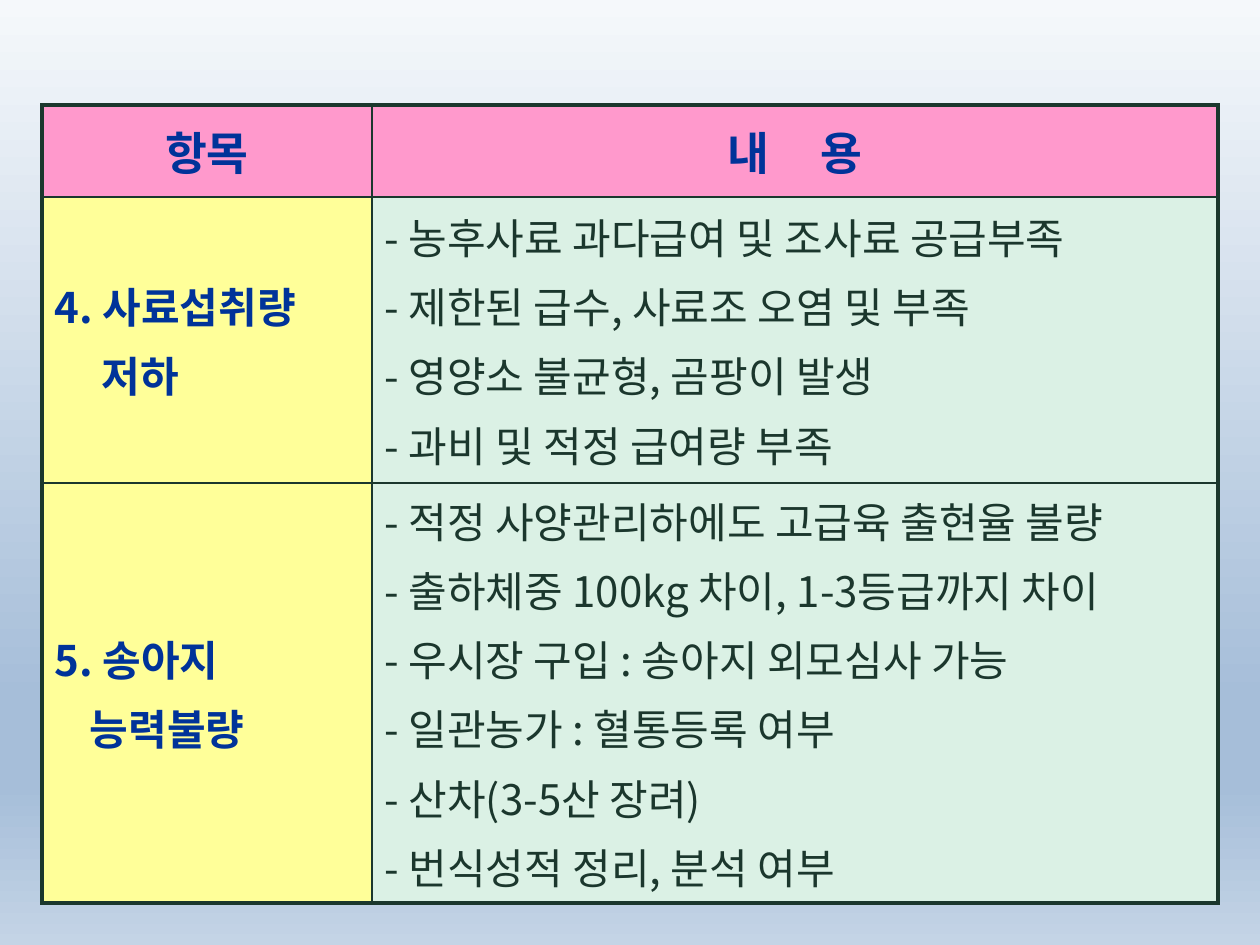
import dataclasses

import pptx
import pptx.dml.color
import pptx.enum.text
import pptx.oxml
import pptx.oxml.ns
import pptx.oxml.xmlchemy
import pptx.util

qn = pptx.oxml.ns.qn
RGB = pptx.dml.color.RGBColor.from_string


@dataclasses.dataclass(frozen=True)
class Theme:
    """Colours, type sizes and line widths of the deck."""
    font: str = "Noto Sans CJK KR"
    ink: str = "1B372D"
    title: str = "003399"
    head_fill: str = "FF99CC"
    item_fill: str = "FFFF99"
    body_fill: str = "DBF1E5"
    head_size: float = 26
    body_size: float = 24
    space: float = 4.8
    outer: float = 2.25
    inner: float = 1
    backdrop: tuple = ((0, "F5F8FB"), (74, "A6BED9"), (83, "A6BED9"), (100, "C4D4E6"))


class Deck:
    """Draws elements on the current slide, measured on a 30 by 90 grid."""

    def __init__(self, theme):
        """Open a deck with one blank slide."""
        self.theme = theme
        self.prs = pptx.Presentation()
        self.prs.slide_width = pptx.util.Inches(10)
        self.prs.slide_height = pptx.util.Inches(7.5)
        self.s = self.prs.slides.add_slide(self.prs.slide_layouts[6])

    def x(self, columns):
        """Turn grid columns into a length."""
        return round(self.prs.slide_width * columns / 30)

    def y(self, rows):
        """Turn grid rows into a length."""
        return round(self.prs.slide_height * rows / 90)

    def background(self):
        """Fill the slide with the vertical gradient of the theme."""
        fill = self.s.background.fill
        fill.gradient()
        fill.gradient_angle = 270
        stops = self.s.element.find(".//" + qn("a:gsLst"))
        for stop in list(stops):
            stops.remove(stop)
        for share, colour in self.theme.backdrop:
            stop = pptx.oxml.xmlchemy.OxmlElement("a:gs")
            stop.set("pos", str(share * 1000))
            pptx_colour = pptx.oxml.xmlchemy.OxmlElement("a:srgbClr")
            pptx_colour.set("val", colour)
            stop.append(pptx_colour)
            stops.append(stop)

    def table(self, left, top, widths, heights):
        """Add a table with a heavy frame and thin inner rules."""
        frame = self.s.shapes.add_table(
            len(heights), len(widths), self.x(left), self.y(top),
            self.x(sum(widths)), self.y(sum(heights)))
        tbl = frame.table
        tbl.first_row = tbl.horz_banding = False
        for column, width in zip(tbl.columns, widths):
            column.width = self.x(width)
        for row, height in zip(tbl.rows, heights):
            row.height = self.y(height)
        last_row, last_column = len(heights) - 1, len(widths) - 1
        for i in range(len(heights)):
            for j in range(len(widths)):
                edges = {"L": j == 0, "R": j == last_column, "T": i == 0, "B": i == last_row}
                for side, is_outer in edges.items():
                    width = self.theme.outer if is_outer else self.theme.inner
                    self.border(tbl.cell(i, j), side, width)
        return tbl

    def border(self, cell, side, width):
        """Rule one side of a cell."""
        namespace = pptx.oxml.ns.nsdecls("a")
        cell._tc.get_or_add_tcPr().append(pptx.oxml.parse_xml(
            f'<a:ln{side} {namespace} w="{pptx.util.Pt(width)}"><a:solidFill>'
            f'<a:srgbClr val="{self.theme.ink}"/></a:solidFill></a:ln{side}>'))

    def cell(self, cell, lines, fill, colour, size, bold=False, centred=False, hang=0):
        """Fill a cell with paragraphs, each a list of text and tracking pairs."""
        cell.fill.solid()
        cell.fill.fore_color.rgb = RGB(fill)
        cell.vertical_anchor = pptx.enum.text.MSO_ANCHOR.MIDDLE
        tf = cell.text_frame
        for i, line in enumerate(lines):
            p = tf.add_paragraph() if i else tf.paragraphs[0]
            if i:
                p.space_before = pptx.util.Pt(self.theme.space)
                if hang:
                    p._p.get_or_add_pPr().set("marL", str(self.x(hang)))
            if centred:
                p.alignment = pptx.enum.text.PP_ALIGN.CENTER
            for text, tracking in line:
                self.run(p, text, tracking, colour, size, bold)

    def run(self, p, text, tracking, colour, size, bold):
        """Add one styled run, tracked by a number of points."""
        r = p.add_run()
        r.text = text
        r.font.name = self.theme.font
        r.font.size = pptx.util.Pt(size)
        r.font.bold = bold
        r.font.color.rgb = RGB(colour)
        properties = r._r.get_or_add_rPr()
        if tracking:
            properties.set("spc", str(tracking * 100))
        east_asian = pptx.oxml.xmlchemy.OxmlElement("a:ea")
        east_asian.set("typeface", self.theme.font)
        properties.find(qn("a:latin")).addnext(east_asian)


HEADINGS = ([("항목", 0)], [("내", 0), (" ", 23), ("용", 0)])
ITEMS = (
    (("4. 사료섭취량", "저하"), 1.12, (
        "농후사료 과다급여 및 조사료 공급부족",
        "제한된 급수, 사료조 오염 및 부족",
        "영양소 불균형, 곰팡이 발생",
        "과비 및 적정 급여량 부족")),
    (("5. 송아지", "능력불량"), 0.84, (
        "적정 사양관리하에도 고급육 출현율 불량",
        "출하체중 100kg 차이, 1-3등급까지 차이",
        "우시장 구입 : 송아지 외모심사 가능",
        "일관농가 : 혈통등록 여부",
        "산차(3-5산 장려)",
        "번식성적 정리, 분석 여부")),
)


def main():
    """Build the slide and save it."""
    theme = Theme()
    deck = Deck(theme)
    deck.background()
    tbl = deck.table(1, 10, widths=(7.86, 20.14), heights=(8.76, 27.24, 38))
    for j, heading in enumerate(HEADINGS):
        deck.cell(tbl.cell(0, j), [heading], theme.head_fill, theme.title,
                  theme.head_size, bold=True, centred=True)
    for i, (item, hang, points) in enumerate(ITEMS, start=1):
        deck.cell(tbl.cell(i, 0), [[(text, 0)] for text in item], theme.item_fill,
                  theme.title, theme.body_size, bold=True, hang=hang)
        deck.cell(tbl.cell(i, 1), [[(f"- {text}", 0)] for text in points],
                  theme.body_fill, theme.ink, theme.body_size)
    deck.prs.save("out.pptx")


if __name__ == "__main__":
    main()
